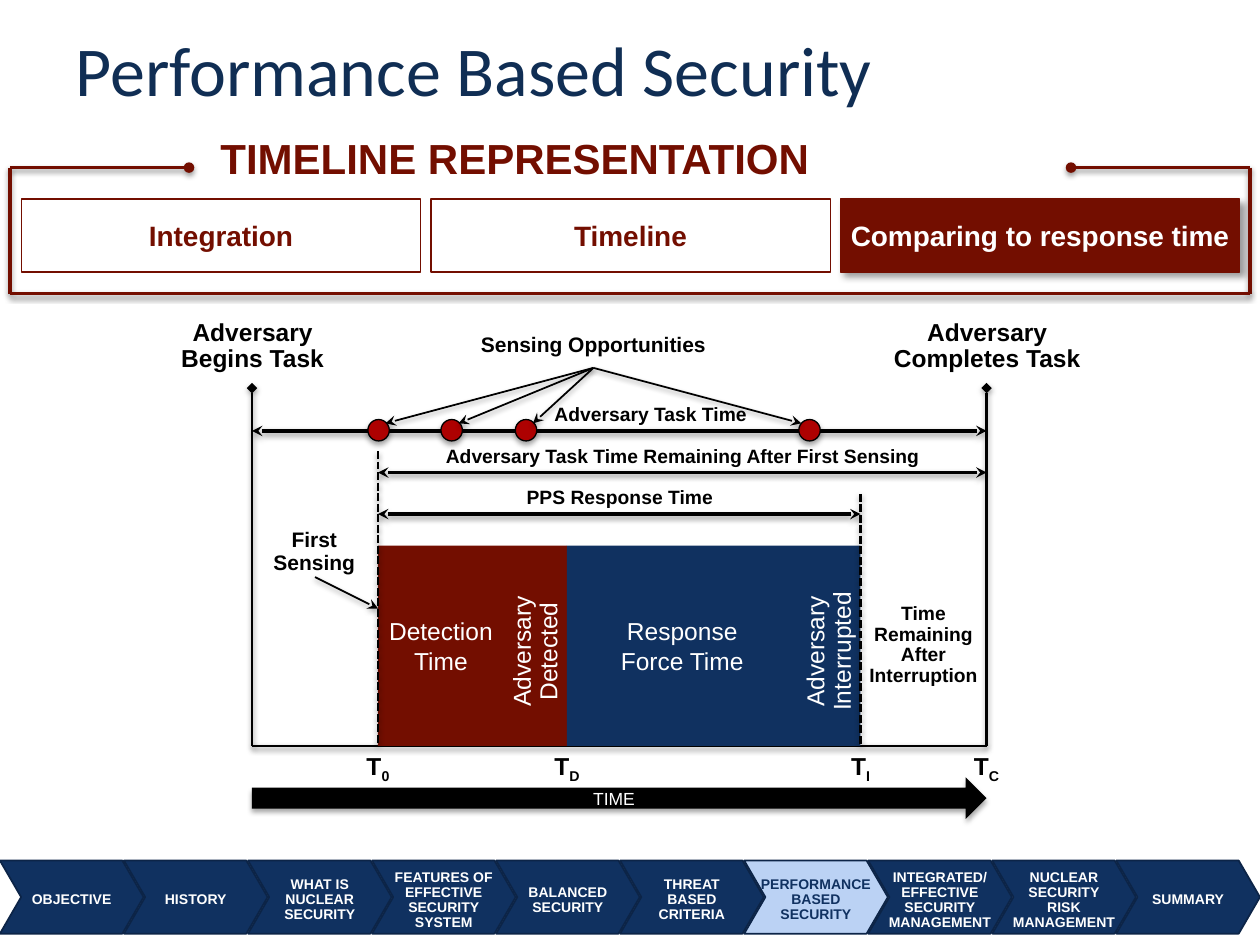
from dataclasses import dataclass

from lxml import etree
from pptx import Presentation
from pptx.dml.color import RGBColor
from pptx.enum.dml import MSO_LINE
from pptx.enum.shapes import MSO_CONNECTOR, MSO_SHAPE
from pptx.enum.text import MSO_ANCHOR, PP_ALIGN
from pptx.oxml.ns import qn
from pptx.util import Inches, Pt

RECT, OVAL = MSO_SHAPE.RECTANGLE, MSO_SHAPE.OVAL
CHEVRON, ARROW = MSO_SHAPE.CHEVRON, MSO_SHAPE.RIGHT_ARROW
STRAIGHT, DASH = MSO_CONNECTOR.STRAIGHT, MSO_LINE.SQUARE_DOT
TOP, MIDDLE = MSO_ANCHOR.TOP, MSO_ANCHOR.MIDDLE
LEFT, CENTER, JUSTIFY = PP_ALIGN.LEFT, PP_ALIGN.CENTER, PP_ALIGN.JUSTIFY


@dataclass(frozen=True)
class Theme:
    font: str = "Arial"
    title_font: str = "Calibri"
    title_color: str = "102E54"
    red: str = "730E00"
    dot: str = "AD0101"
    navy: str = "103160"
    navy_edge: str = "0C2447"
    sky: str = "BBD2F4"
    black: str = "000000"
    white: str = "FFFFFF"
    title: int = 40
    heading: int = 24
    tab: int = 16
    label: int = 14
    note: int = 12
    span: int = 11
    time: int = 10
    nav: int = 8
    line_shadow: tuple = (38, 3.1, 1.6, 90)
    shape_shadow: tuple = (35, 3.1, 1.8, 90)
    tab_shadow: tuple = (40, 4, 3, 45)


T = Theme()
START, SENSED, DETECTED, INTERRUPTED, END = 2, 3, 4.5, 6.83, 7.83
BASE, BAND_TOP, TASK_Y = 5.92, 4.33, 3.42
NAV = ["OBJECTIVE", "HISTORY", "WHAT IS\nNUCLEAR\nSECURITY",
       "FEATURES OF\nEFFECTIVE\nSECURITY\nSYSTEM", "BALANCED\nSECURITY",
       "THREAT\nBASED\nCRITERIA", "PERFORMANCE\nBASED\nSECURITY",
       "INTEGRATED/\nEFFECTIVE\nSECURITY\nMANAGEMENT",
       "NUCLEAR\nSECURITY\nRISK\nMANAGEMENT", "SUMMARY"]
CURRENT = 6


def rgb(color):
    return RGBColor.from_string(color)


def add_shadow(sp, shadow):
    spPr = sp._element.spPr
    effects = spPr.find(qn("a:effectLst"))
    if effects is None:
        effects = etree.SubElement(spPr, qn("a:effectLst"))
    if shadow:
        alpha, blur, dist, angle = shadow
        outer = etree.SubElement(effects, qn("a:outerShdw"), blurRad=str(Pt(blur)),
                                 dist=str(Pt(dist)), dir=str(angle * 60000), rotWithShape="0")
        clr = etree.SubElement(outer, qn("a:srgbClr"), val=T.black)
        etree.SubElement(clr, qn("a:alpha"), val=str(alpha * 1000))


def set_font(p, size, color, bold=False, name=T.font):
    p.font.name = name
    p.font.size = Pt(size)
    p.font.bold = bold
    p.font.color.rgb = rgb(color)


def write(sp, text, size, color, bold=False, spacing=None, align=CENTER,
          anchor=MIDDLE, insets=(0, 0.05, 0, 0.05), wrap=True):
    tf = sp.text_frame
    tf.word_wrap = wrap
    tf.vertical_anchor = anchor
    tf.margin_left, tf.margin_top, tf.margin_right, tf.margin_bottom = map(Inches, insets)
    tf.text = text
    for p in tf.paragraphs:
        p.alignment = align
        if spacing:
            p.line_spacing = spacing
        set_font(p, size, color, bold)


def add_label(s, text, x, y, w, h, size, color=T.black, bold=True, spacing=0.9, **options):
    sp = s.shapes.add_textbox(*map(Inches, (x, y, w, h)))
    write(sp, text, size, color, bold, spacing, **options)
    return sp


def add_box(s, kind, x, y, w, h, fill, edge=None, width=0.75, shadow=None):
    sp = s.shapes.add_shape(kind, *map(Inches, (x, y, w, h)))
    sp.fill.solid()
    sp.fill.fore_color.rgb = rgb(fill)
    if edge:
        sp.line.color.rgb = rgb(edge)
        sp.line.width = Pt(width)
    else:
        sp.line.fill.background()
    sp.shadow.inherit = False
    add_shadow(sp, shadow)
    return sp


def add_line(s, x1, y1, x2, y2, width, color=T.black, head=None, tail=None, dash=None):
    c = s.shapes.add_connector(STRAIGHT, *map(Inches, (x1, y1, x2, y2)))
    c.line.color.rgb = rgb(color)
    c.line.width = Pt(width)
    if dash:
        c.line.dash_style = dash
    ln = c.line._get_or_add_ln()
    for tag, end in (("a:headEnd", head), ("a:tailEnd", tail)):
        if end:
            etree.SubElement(ln, qn(tag), type=end)
    add_shadow(c, T.line_shadow)


def add_title(s):
    title = s.shapes.title
    title.left, title.top, title.width, title.height = map(Inches, (0.5, 0, 9, 1.08))
    title.text_frame.text = "Performance Based Security"
    title.text_frame.vertical_anchor = MIDDLE
    p = title.text_frame.paragraphs[0]
    p.alignment = LEFT
    set_font(p, T.title, T.title_color, name=T.title_font)


def add_tabs(s):
    add_label(s, "TIMELINE REPRESENTATION", 1.75, 1, 6.5, 0.58, T.heading, T.red,
              spacing=None, align=JUSTIFY, anchor=TOP)
    for i, text in enumerate(["Integration", "Timeline", "Comparing to response time"]):
        active = i == 2
        sp = add_box(s, RECT, 0.17 + 3.25 * i, 1.58, 3.17, 0.58,
                     T.red if active else T.white, T.red,
                     shadow=T.tab_shadow if active else None)
        write(sp, text, T.tab, T.white if active else T.red, True)
    for edge, inner in ((0.08, 1.5), (9.92, 8.5)):
        add_line(s, edge, 1.33, inner, 1.33, 2, T.red, tail="oval")
        add_line(s, edge, 1.33, edge, 2.33, 2, T.red)
    add_line(s, 9.92, 2.33, 0.08, 2.33, 2, T.red)


def add_bands(s):
    bands = [(SENSED, DETECTED, T.red, "Detection\nTime", "Adversary\nDetected"),
             (DETECTED, INTERRUPTED, T.navy, "Response\nForce Time", "Adversary\nInterrupted")]
    for left, right, fill, text, event in bands:
        sp = add_box(s, RECT, left, BAND_TOP, right - left, BASE - BAND_TOP, fill)
        write(sp, text, T.label, T.white, insets=(0, 0.05, 0.5, 0.05))
        sp = add_label(s, event, right - 1.08, 4.92, 1.67, 0.5, T.label, T.white, bold=False)
        sp.rotation = 270


def add_sensing(s):
    for center in (3, 3.58, 4.17, 6.42):
        add_box(s, OVAL, center - 0.08, 3.33, 0.17, 0.17, T.dot, T.black, shadow=T.shape_shadow)
        near = center + (0.06 if center < 4.71 else -0.06)
        add_line(s, 4.71, 2.92, near, 3.36, 1, tail="stealth")
    add_line(s, 2.5, 4.58, SENSED, 4.83, 1, tail="stealth")


def add_timeline(s):
    for left, y, right in ((START, TASK_Y, END), (SENSED, 3.75, END), (SENSED, 4.08, INTERRUPTED)):
        add_line(s, left, y, right, y, 2, head="stealth", tail="stealth")
    for x in (START, END):
        add_line(s, x, 3.08, x, BASE, 1.5, head="diamond")
    add_line(s, END, BASE, START, BASE, 1.5)
    add_bands(s)
    for x, top in ((SENSED, 3.58), (INTERRUPTED, 3.92)):
        add_line(s, x, top, x, BASE, 1.5, dash=DASH)
    add_sensing(s)
    for text, x, y, w, h, size in (
            ("Adversary\nCompletes Task", 7, 2.5, 1.67, 0.5, T.label),
            ("Adversary\nBegins Task", 1.17, 2.5, 1.67, 0.5, T.label),
            ("Sensing Opportunities", 3, 2.58, 3.42, 0.33, T.note),
            ("PPS Response Time", 3.17, 3.83, 3.5, 0.25, T.span),
            ("Adversary Task Time Remaining After First Sensing", 3.17, 3.5, 4.5, 0.25, T.span),
            ("Adversary Task Time", 4, 3.17, 2.33, 0.25, T.span),
            ("Time\nRemaining\nAfter\nInterruption", INTERRUPTED, BAND_TOP, 1, 1.58, T.span)):
        add_label(s, text, x, y, w, h, size)
    add_label(s, "First\nSensing", 2.08, 4.17, 0.83, 0.42, T.note, wrap=False)
    for mark, x in (("0", SENSED), ("D", DETECTED), ("I", INTERRUPTED), ("C", END)):
        sp = add_label(s, "T", x - 0.25, BASE, 0.5, 0.33, T.label)
        r = sp.text_frame.paragraphs[0].add_run()
        r.text = mark
        r._r.get_or_add_rPr().set("baseline", "-25000")
    sp = add_box(s, ARROW, START, 6.17, END - START, 0.33, T.black, shadow=T.shape_shadow)
    write(sp, "TIME", T.time, T.white, insets=(0.1, 0.05, 0.1, 0.05))


def add_navigation(s):
    width = 1.14
    step = (10 - width) / (len(NAV) - 1)
    for i, text in reversed(list(enumerate(NAV))):
        fill, color = (T.sky, T.navy) if i == CURRENT else (T.navy, T.white)
        sp = add_box(s, CHEVRON, i * step, 6.83, width, 0.58, fill, T.navy_edge, 1)
        sp.adjustments[0] = 0.29
        write(sp, text, T.nav, color, True, 0.9, insets=(0.1, 0.05, 0.1, 0), wrap=False)


def main():
    prs = Presentation()
    prs.slide_width, prs.slide_height = Inches(10), Inches(7.5)
    s = prs.slides.add_slide(prs.slide_layouts[5])
    add_title(s)
    add_tabs(s)
    add_timeline(s)
    add_navigation(s)
    prs.save("out.pptx")


if __name__ == "__main__":
    main()
